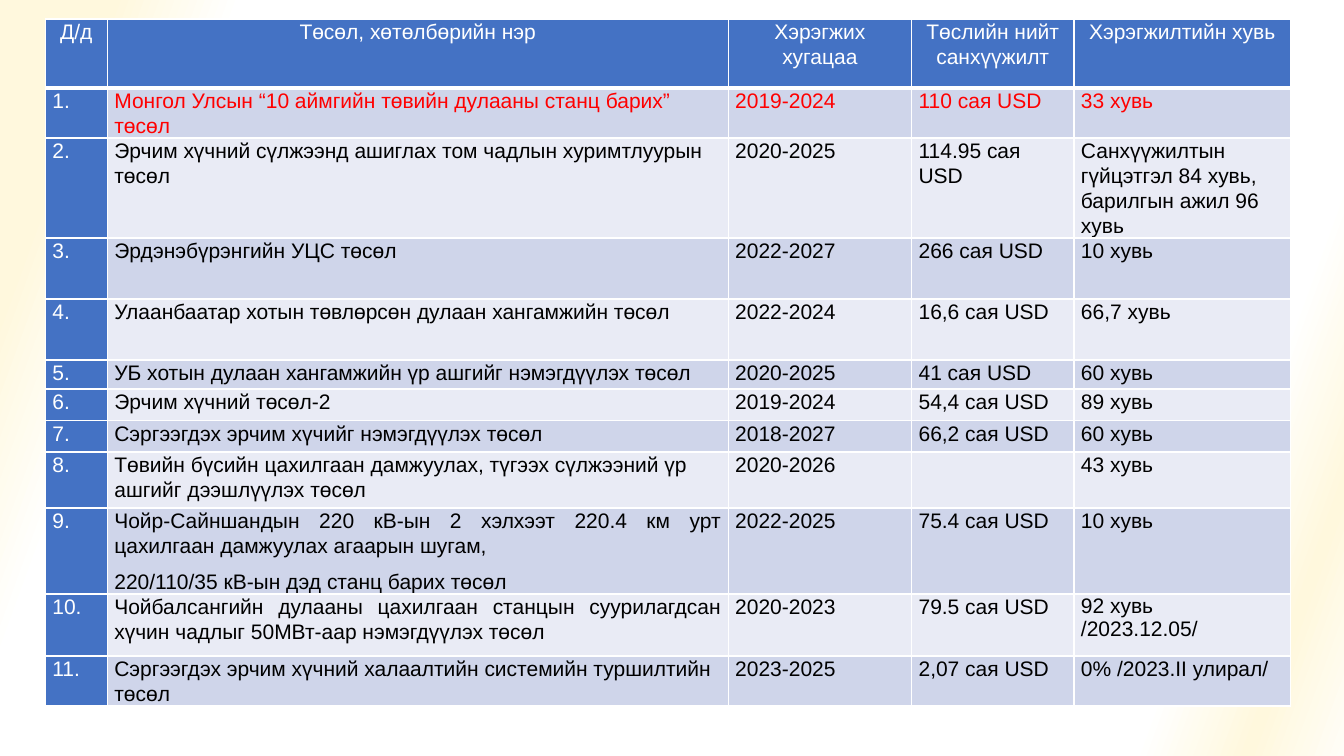
"""Build a slide with a table of energy projects, their budgets and progress."""
import pptx
import pptx.dml.color
import pptx.enum.text
import pptx.oxml
import pptx.oxml.ns
import pptx.util

Pt = pptx.util.Pt
qn = pptx.oxml.ns.qn
ALIGN = pptx.enum.text.PP_ALIGN

COLORS = {
    "header": "4472C4",
    "odd": "CFD5EA",
    "even": "E9EBF5",
    "white": "FFFFFF",
    "text": "000000",
    "alert": "FF0000",
    "cream": "FFF8DD",
    "ivory": "FFFDF7",
}
GRADIENT = [(0, "cream"), (7, "cream"), (15, "white"),
            (87, "white"), (94, "cream"), (100, "ivory")]
COL_WIDTHS = [44.3, 443.5, 131, 116, 154.8]
ROW_HEIGHTS = [49.3, 35.7, 71.4, 43.6, 43.6, 20.7, 22.8, 22.2, 40, 61.4, 44.3, 35.7]
HEADINGS = ["Д/д", "Төсөл, хөтөлбөрийн нэр", "Хэрэгжих хугацаа",
            "Төслийн нийт санхүүжилт", "Хэрэгжилтийн хувь"]
PROJECTS = [
    ("Монгол Улсын “10 аймгийн төвийн дулааны станц барих” төсөл",
     "2019-2024", "110 сая USD", "33 хувь"),
    ("Эрчим хүчний сүлжээнд ашиглах том чадлын хуримтлуурын төсөл",
     "2020-2025", "114.95 сая USD",
     "Санхүүжилтын гүйцэтгэл 84 хувь, барилгын ажил 96 хувь"),
    ("Эрдэнэбүрэнгийн УЦС төсөл", "2022-2027", "266 сая USD", "10 хувь"),
    ("Улаанбаатар хотын төвлөрсөн дулаан хангамжийн төсөл",
     "2022-2024", "16,6 сая USD", "66,7 хувь"),
    ("УБ хотын дулаан хангамжийн үр ашгийг нэмэгдүүлэх төсөл",
     "2020-2025", "41 сая USD", "60 хувь"),
    ("Эрчим хүчний төсөл-2", "2019-2024", "54,4 сая USD", "89 хувь"),
    ("Сэргээгдэх эрчим хүчийг нэмэгдүүлэх төсөл",
     "2018-2027", "66,2 сая USD", "60 хувь"),
    ("Төвийн бүсийн цахилгаан дамжуулах, түгээх сүлжээний үр ашгийг дээшлүүлэх төсөл",
     "2020-2026", "", "43 хувь"),
    ("Чойр-Сайншандын 220 кВ-ын 2 хэлхээт 220.4 км урт цахилгаан дамжуулах агаарын шугам,\n"
     "220/110/35 кВ-ын дэд станц барих төсөл",
     "2022-2025", "75.4 сая USD", "10 хувь"),
    ("Чойбалсангийн дулааны цахилгаан станцын суурилагдсан хүчин чадлыг "
     "50МВт-аар нэмэгдүүлэх төсөл",
     "2020-2023", "79.5 сая USD", "92 хувь\n/2023.12.05/"),
    ("Сэргээгдэх эрчим хүчний халаалтийн системийн туршилтийн төсөл",
     "2023-2025", "2,07 сая USD", "0% /2023.II улирал/"),
]
ALERT_ROW = 1
JUSTIFIED = {(1, 4), (9, 1), (10, 1)}
TIGHT = {(10, 4)}


def rgb(name):
    """Return the named colour."""
    return pptx.dml.color.RGBColor.from_string(COLORS[name])


def set_background(s):
    """Fill the slide with the slanted cream and white gradient."""
    fill = s.background.fill
    fill.gradient()
    fill.gradient_angle = 340
    stops = s.element.find(".//" + qn("a:gsLst"))
    for stop in list(stops):
        stops.remove(stop)
    for percent, name in GRADIENT:
        stops.append(pptx.oxml.parse_xml(
            f'<a:gs {pptx.oxml.ns.nsdecls("a")} pos="{percent * 1000}">'
            f'<a:srgbClr val="{COLORS[name]}"/></a:gs>'))


def set_borders(cell, bottom):
    """Give a cell white borders, with its own bottom width."""
    tcPr = cell._tc.get_or_add_tcPr()
    for side, width in (("L", 1), ("R", 1), ("T", 1), ("B", bottom)):
        tcPr.append(pptx.oxml.parse_xml(
            f'<a:ln{side} {pptx.oxml.ns.nsdecls("a")} w="{Pt(width)}"><a:solidFill>'
            f'<a:srgbClr val="{COLORS["white"]}"/></a:solidFill></a:ln{side}>'))


def fill_cell(cell, text, fill, color, align, tight=False, bottom=1):
    """Write and format one table cell."""
    set_borders(cell, bottom)
    cell.fill.solid()
    cell.fill.fore_color.rgb = rgb(fill)
    cell.margin_left = cell.margin_right = Pt(5)
    cell.margin_top = cell.margin_bottom = Pt(0)
    cell.text = text
    for p in cell.text_frame.paragraphs:
        p.alignment = align
        if not tight:
            p.line_spacing = 1.07
            p.space_after = Pt(8)
        p.font.name = "Arial"
        p.font.size = Pt(15)
        p.font.color.rgb = rgb(color)


def add_project_table(s):
    """Add the table of projects."""
    tbl = s.shapes.add_table(len(ROW_HEIGHTS), len(COL_WIDTHS), Pt(32.4), Pt(13.6),
                             Pt(sum(COL_WIDTHS)), Pt(sum(ROW_HEIGHTS))).table
    tbl.first_row = tbl.horz_banding = False
    for col, width in zip(tbl.columns, COL_WIDTHS):
        col.width = Pt(width)
    for row, height in zip(tbl.rows, ROW_HEIGHTS):
        row.height = Pt(height)
    for j, heading in enumerate(HEADINGS):
        fill_cell(tbl.cell(0, j), heading, "header", "white", ALIGN.CENTER, bottom=3)
    for i, project in enumerate(PROJECTS, 1):
        fill_cell(tbl.cell(i, 0), f"{i}.", "header", "white", ALIGN.LEFT)
        band = "odd" if i % 2 else "even"
        color = "alert" if i == ALERT_ROW else "text"
        for j, text in enumerate(project, 1):
            align = ALIGN.JUSTIFY if (i, j) in JUSTIFIED else ALIGN.LEFT
            fill_cell(tbl.cell(i, j), text, band, color, align, (i, j) in TIGHT)


def main():
    """Build and save the presentation."""
    prs = pptx.Presentation()
    prs.slide_width, prs.slide_height = Pt(960), Pt(540)
    s = prs.slides.add_slide(prs.slide_layouts[6])
    set_background(s)
    add_project_table(s)
    prs.save("out.pptx")


if __name__ == "__main__":
    main()
